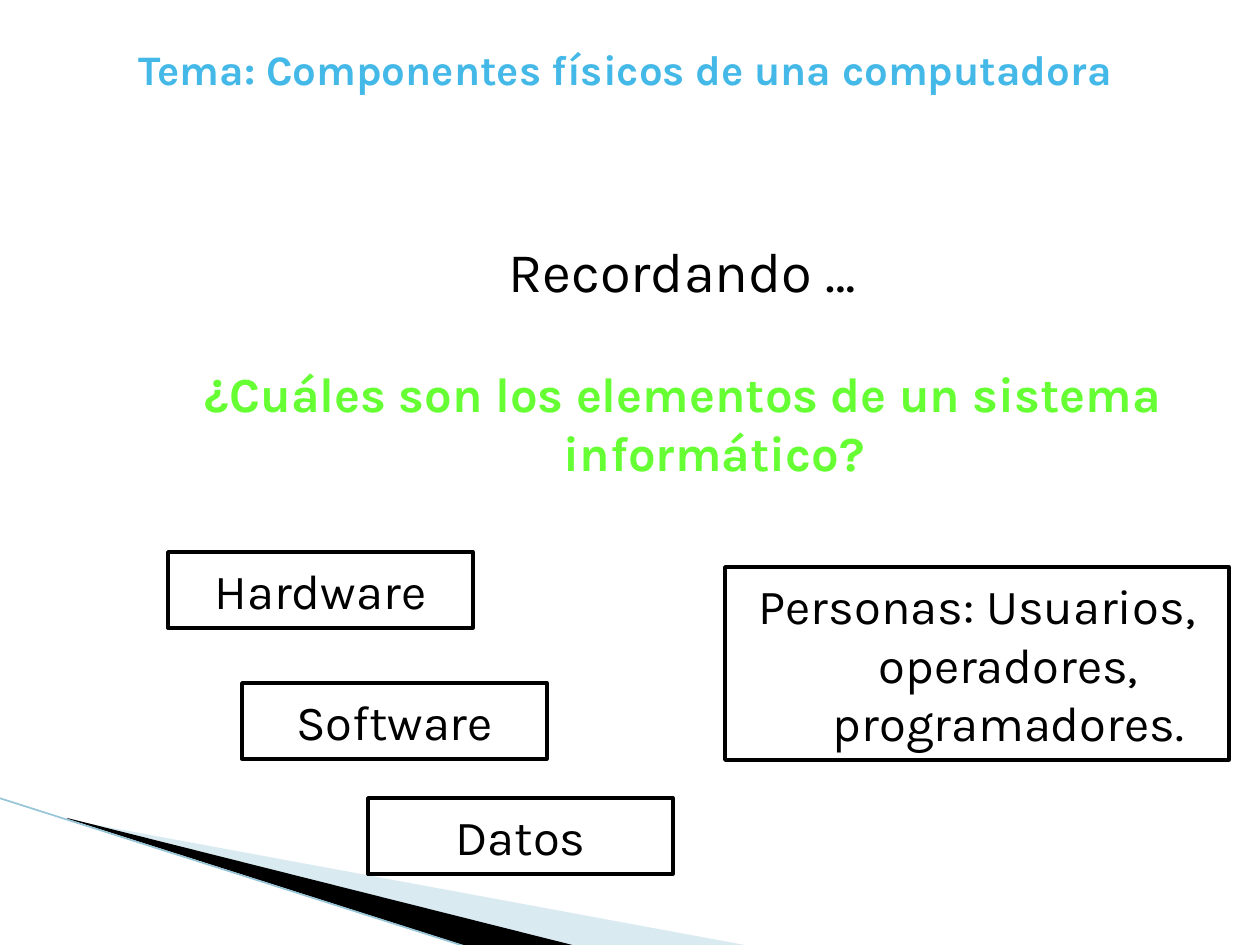
import pptx
import pptx.dml.color
import pptx.enum.shapes
import pptx.enum.text
import pptx.oxml
import pptx.oxml.ns
import pptx.util

PX = pptx.util.Inches(1) / 126
ALIGN = pptx.enum.text.PP_ALIGN
ANCHOR = pptx.enum.text.MSO_ANCHOR
KIND = pptx.enum.shapes


def px(*nums):
    return [round(n * PX) for n in nums]


def tint(code):
    return pptx.dml.color.RGBColor.from_string(code)


def write(shape, text, size=28, color="000000", bold=False, font="Karla",
          align=ALIGN.CENTER, wrap=True, hang=0):
    frame = shape.text_frame
    frame.text = text
    frame.word_wrap = wrap
    frame.auto_size = pptx.enum.text.MSO_AUTO_SIZE.NONE
    frame.vertical_anchor = ANCHOR.MIDDLE
    para = frame.paragraphs[0]
    para.alignment = align
    if hang:
        props = para._p.get_or_add_pPr()
        props.set("marL", str(px(hang)[0]))
        props.set("indent", str(-px(hang)[0]))
    face = para.runs[0].font
    face.name, face.size, face.bold = font, pptx.util.Pt(size), bold
    face.color.rgb = tint(color)


class Deck:
    ink = "000000"
    hang = 63

    def __init__(self):
        self.file = pptx.Presentation()
        self.file.slide_width, self.file.slide_height = px(1260, 945)
        self.slide = self.file.slides.add_slide(self.file.slide_layouts[5])
        self.shapes = self.slide.shapes

    def title(self, text, area, **style):
        shape = self.shapes.title
        shape.left, shape.top, shape.width, shape.height = px(*area)
        write(shape, text, **style)

    def label(self, text, area, **style):
        write(self.shapes.add_textbox(*px(*area)), text, **style)

    def box(self, text, area):
        shape = self.shapes.add_shape(KIND.MSO_SHAPE.RECTANGLE, *px(*area))
        shape.shadow.inherit = False
        shape.fill.background()
        shape.line.color.rgb = tint(self.ink)
        shape.line.width = pptx.util.Pt(2)
        write(shape, text, color=self.ink, hang=self.hang)

    def wedge(self, points, color, alpha=100):
        path = self.shapes.build_freeform(*points[0], scale=PX)
        path.add_line_segments(points[1:], close=True)
        shape = path.convert_to_shape()
        shape.shadow.inherit = False
        shape.line.fill.background()
        shape.fill.solid()
        shape.fill.fore_color.rgb = tint(color)
        if alpha < 100:
            node = shape._element.spPr.find(".//" + pptx.oxml.ns.qn("a:srgbClr"))
            pptx.oxml.ns.qn("a:alpha")
            node.append(node.makeelement(pptx.oxml.ns.qn("a:alpha"),
                                         {"val": str(alpha * 1000)}))

    def line(self, ends, color, width):
        shape = self.shapes.add_connector(KIND.MSO_CONNECTOR.STRAIGHT, *px(*ends))
        shape.line.color.rgb = tint(color)
        shape.line.width = pptx.util.Pt(width)
        props = shape._element.spPr
        props.append(props.makeelement(pptx.oxml.ns.qn("a:effectLst"), {}))


def main():
    deck = Deck()

    # Corner wedges
    deck.wedge([(69, 820), (750, 946), (575, 946), (69, 819)], "A0CBDC", 40)
    deck.wedge([(67, 818), (576, 946), (469, 947), (68, 819)], "000000")
    deck.line((-1, 798, 467, 947), "97C5D8", 0.95)

    # Heading and question
    deck.title("Tema: Componentes físicos de una computadora",
               (126, 37, 1051, 63), size=24, color="44B9E8", bold=True,
               align=ALIGN.LEFT, wrap=False)
    deck.label("¿Cuáles son los elementos de un sistema informático?",
               (126, 357, 1113, 130), color="66FF33", bold=True, hang=deck.hang)
    deck.label("Recordando …", (126, 231, 1113, 79), size=32)

    # Parts of the system
    for text, left, top in (("Hardware", 168, 552), ("Software", 242, 683),
                            ("Datos", 368, 798)):
        deck.box(text, (left, top, 305, 76))
    deck.box("Personas: Usuarios, operadores, programadores.",
             (725, 567, 504, 193))

    deck.file.save("out.pptx")


if __name__ == "__main__":
    main()
